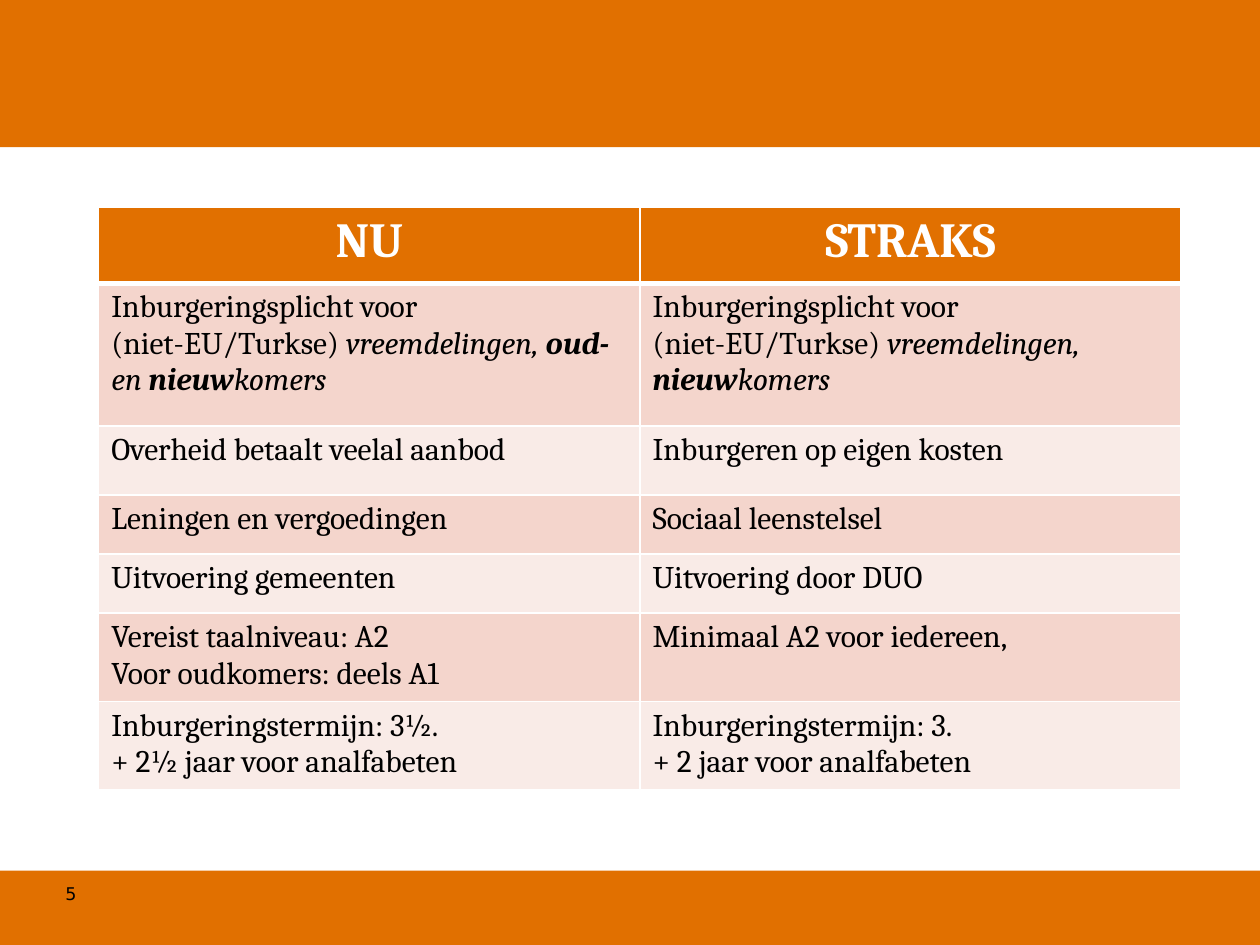
"""Build a slide that compares the integration rules of now and later in a table."""
from lxml import etree
from pptx import Presentation
from pptx import util as u
from pptx.dml.color import RGBColor
from pptx.enum import shapes, text
from pptx.oxml.ns import qn

ORANGE = RGBColor(0xE1, 0x70, 0x00)
PINK = RGBColor(0xF4, 0xD5, 0xCC)
PALE = RGBColor(0xF9, 0xEB, 0xE7)
WHITE = RGBColor(0xFF, 0xFF, 0xFF)
BLACK = RGBColor(0, 0, 0)

PLAIN = {"name": "Cambria", "size": u.Pt(18), "bold": False, "italic": False}
ITALIC = {**PLAIN, "italic": True}
STRONG = {**ITALIC, "bold": True}
HEADER = {**PLAIN, "size": u.Pt(28), "bold": True}
NUMBER = {**PLAIN, "name": "DejaVu Sans", "size": u.Pt(10)}

DUTY = ("Inburgeringsplicht voor (niet-EU/Turkse) ", PLAIN)
FOREIGNERS = ("vreemdelingen, ", ITALIC)
NEWCOMERS = [("nieuw", STRONG), ("komers", ITALIC)]

ROWS = [
    (1.54, ["NU", "STRAKS"]),
    (2.88, [[[DUTY, FOREIGNERS, ("oud-", STRONG), (" en ", ITALIC), *NEWCOMERS]],
            [[DUTY, FOREIGNERS, *NEWCOMERS]]]),
    (1.39, ["Overheid betaalt veelal aanbod", "Inburgeren op eigen kosten"]),
    (1.19, ["Leningen en vergoedingen", "Sociaal leenstelsel"]),
    (1.19, ["Uitvoering gemeenten", "Uitvoering door DUO"]),
    (1.54, ["Vereist taalniveau: A2\nVoor oudkomers: deels A1",
            "Minimaal A2 voor iedereen,"]),
    (1.54, ["Inburgeringstermijn: 3½.\n+ 2½ jaar voor analfabeten",
            "Inburgeringstermijn: 3.\n+ 2 jaar voor analfabeten"]),
]
BANDS = [(0, 2.97), (17.55, 1.5)]


def write(frame, content, style, color, alignment=text.PP_ALIGN.LEFT):
    if isinstance(content, str):
        content = [[(line, style)] for line in content.split("\n")]
    for index, runs in enumerate(content):
        paragraph = frame.add_paragraph() if index else frame.paragraphs[0]
        paragraph.alignment = alignment
        for words, values in runs:
            run = paragraph.add_run()
            run.text = words
            run.font.color.rgb = color
            for name, value in values.items():
                setattr(run.font, name, value)


def add_borders(cell, bottom):
    properties = cell._tc.get_or_add_tcPr()
    widths = {"a:lnL": 1, "a:lnR": 1, "a:lnT": 1, "a:lnB": bottom}
    for index, (tag, width) in enumerate(widths.items()):
        line = etree.Element(qn(tag), w=str(u.Pt(width)))
        fill = etree.SubElement(line, qn("a:solidFill"))
        etree.SubElement(fill, qn("a:srgbClr"), val=str(WHITE))
        properties.insert(index, line)


def add_band(slide, top, height, width):
    band = slide.shapes.add_shape(
        shapes.MSO_SHAPE.RECTANGLE, 0, u.Cm(top), width, u.Cm(height))
    band.shadow.inherit = False
    band.fill.solid()
    band.fill.fore_color.rgb = ORANGE
    band.line.fill.background()


def add_comparison(slide):
    height = sum(row_height for row_height, _ in ROWS)
    table = slide.shapes.add_table(
        len(ROWS), 2, u.Cm(1.99), u.Cm(4.17), u.Cm(21.82), u.Cm(height)).table
    for row, (row_height, contents) in enumerate(ROWS):
        table.rows[row].height = u.Cm(row_height)
        for column, content in enumerate(contents):
            cell = table.cell(row, column)
            cell.fill.solid()
            if row == 0:
                cell.fill.fore_color.rgb = ORANGE
                write(cell.text_frame, content, HEADER, WHITE, text.PP_ALIGN.CENTER)
            else:
                cell.fill.fore_color.rgb = PINK if row % 2 else PALE
                write(cell.text_frame, content, PLAIN, BLACK)
            add_borders(cell, 1 if row else 3)


def main():
    presentation = Presentation()
    presentation.slide_width, presentation.slide_height = u.Cm(25.4), u.Cm(19.05)
    slide = presentation.slides.add_slide(presentation.slide_layouts[6])
    for top, height in BANDS:
        add_band(slide, top, height, presentation.slide_width)
    number = slide.shapes.add_textbox(u.Cm(1.07), u.Cm(17.68), u.Cm(1.98), u.Cm(1.02))
    number.text_frame.word_wrap = True
    write(number.text_frame, "5", NUMBER, BLACK)
    add_comparison(slide)
    presentation.save("out.pptx")


if __name__ == "__main__":
    main()
